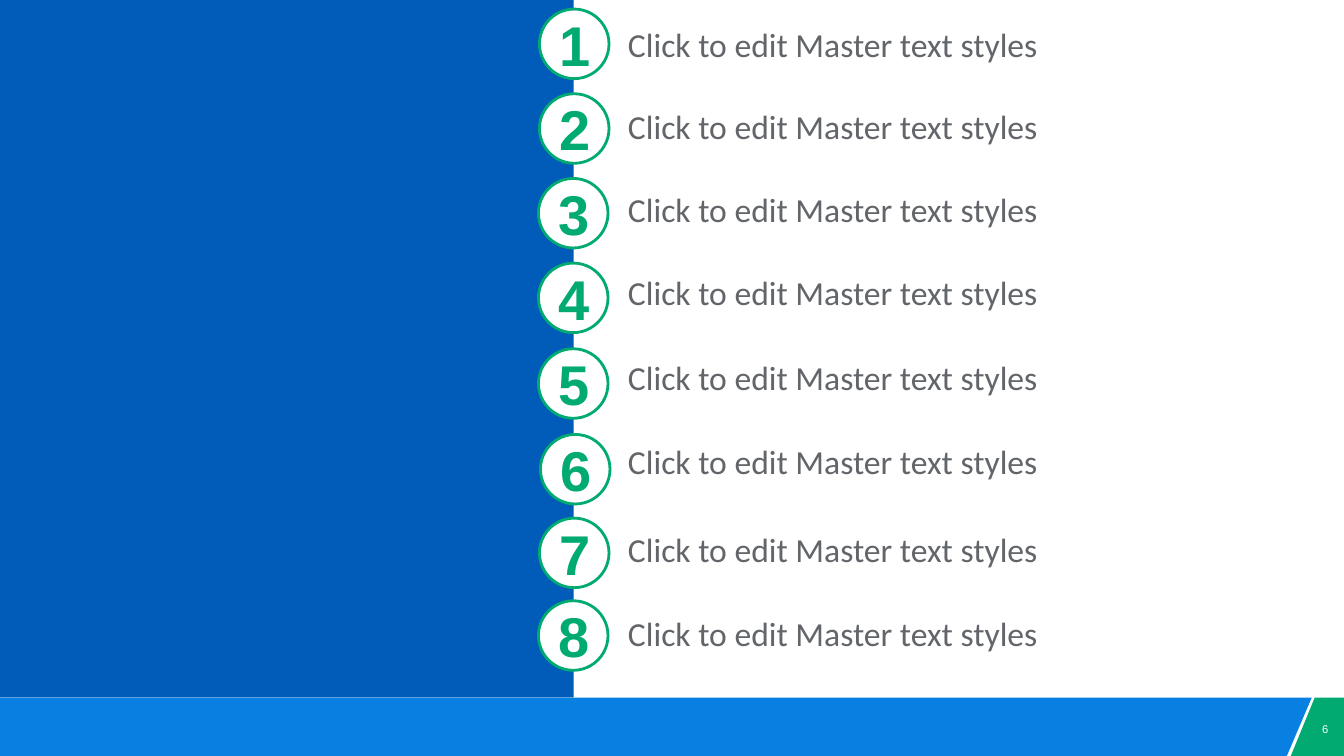
"""Build a numbered agenda slide with a blue side panel and a footer band."""
from pptx import Presentation
from pptx.dml.color import RGBColor
from pptx.enum.shapes import MSO_SHAPE
from pptx.enum.text import MSO_ANCHOR, MSO_AUTO_SIZE, PP_ALIGN
from pptx.util import Inches, Pt

WHITE = RGBColor(0xFF, 0xFF, 0xFF)
NAVY = RGBColor(0x00, 0x5B, 0xB9)
BLUE = RGBColor(0x07, 0x80, 0xE2)
GREEN = RGBColor(0x00, 0xAA, 0x71)
GREY = RGBColor(0x62, 0x65, 0x69)

CIRCLE = 0.69
ITEM_TEXT = "Click to edit Master text styles"
ITEMS = [
    (5.35, 0.09, 0.23),
    (5.35, 0.93, 1.05),
    (5.34, 1.77, 1.87),
    (5.34, 2.61, 2.69),
    (5.34, 3.46, 3.54),
    (5.36, 4.31, 4.37),
    (5.35, 5.14, 5.24),
    (5.34, 5.96, 6.08),
]


def style_shape(sp, fill, line=None):
    """Give a shape a flat fill and an optional outline."""
    sp.shadow.inherit = False
    sp.fill.solid()
    sp.fill.fore_color.rgb = fill
    if line is None:
        sp.line.fill.background()
    else:
        sp.line.color.rgb = line
        sp.line.width = Pt(2)


def add_preset(shapes, kind, left, top, width, height, fill, line=None):
    """Add a filled preset shape."""
    sp = shapes.add_shape(kind, Inches(left), Inches(top), Inches(width), Inches(height))
    style_shape(sp, fill, line)


def add_polygon(shapes, points, fill):
    """Add a closed filled outline through the given points."""
    start, *rest = [(Inches(x), Inches(y)) for x, y in points]
    builder = shapes.build_freeform(*start)
    builder.add_line_segments(rest, close=True)
    style_shape(builder.convert_to_shape(), fill)


def add_text(shapes, text, left, top, width, height, *, size, color, font="Arial",
             bold=False, centered=True, grow=False, spacing=None):
    """Add a text box; centred text has no insets."""
    box = shapes.add_textbox(Inches(left), Inches(top), Inches(width), Inches(height))
    tf = box.text_frame
    tf.word_wrap = True
    if grow:
        tf.auto_size = MSO_AUTO_SIZE.SHAPE_TO_FIT_TEXT
    p = tf.paragraphs[0]
    if centered:
        tf.margin_left = tf.margin_top = tf.margin_right = tf.margin_bottom = 0
        tf.vertical_anchor = MSO_ANCHOR.MIDDLE
        p.alignment = PP_ALIGN.CENTER
    if spacing:
        p.line_spacing = spacing
    r = p.add_run()
    r.text = text
    r.font.name = font
    r.font.size = Pt(size)
    r.font.bold = bold
    r.font.color.rgb = color


def add_badge(shapes, number, left, top):
    """Add a grouped circle with its number in the middle."""
    group = shapes.add_group_shape().shapes
    add_preset(group, MSO_SHAPE.OVAL, left, top, CIRCLE, CIRCLE, WHITE, GREEN)
    height = 0.52 if number <= 4 else 0.67
    add_text(group, str(number), left + 0.1, top + (CIRCLE - height) / 2, 0.5, height,
             size=40, color=GREEN, bold=True, grow=True)


def add_background(shapes):
    """Add the side panel and the footer band."""
    add_preset(shapes, MSO_SHAPE.RECTANGLE, 0, 0, 5.69, 6.92, NAVY)
    add_preset(shapes, MSO_SHAPE.RECTANGLE, -0.01, 6.92, 13.36, 0.61, WHITE)
    add_polygon(shapes, [(-0.01, 6.92), (13.01, 6.92), (12.75, 7.53), (-0.01, 7.53)], BLUE)
    add_polygon(shapes, [(13.42, 6.92), (13.04, 6.92), (12.79, 7.53), (13.43, 7.53)], GREEN)


def main():
    """Create the slide and save it."""
    prs = Presentation()
    prs.slide_width = Inches(13.33)
    prs.slide_height = Inches(7.5)
    shapes = prs.slides.add_slide(prs.slide_layouts[6]).shapes
    add_background(shapes)
    add_text(shapes, "6", 12.97, 7.03, 0.35, 0.4, size=8, color=WHITE)
    for number, (left, top, text_top) in enumerate(ITEMS, start=1):
        add_badge(shapes, number, left, top)
        add_text(shapes, ITEM_TEXT, 6.13, text_top, 6.33, 0.61, size=24, color=GREY,
                 font="Calibri", centered=False, spacing=0.9)
    prs.save("out.pptx")


if __name__ == "__main__":
    main()
